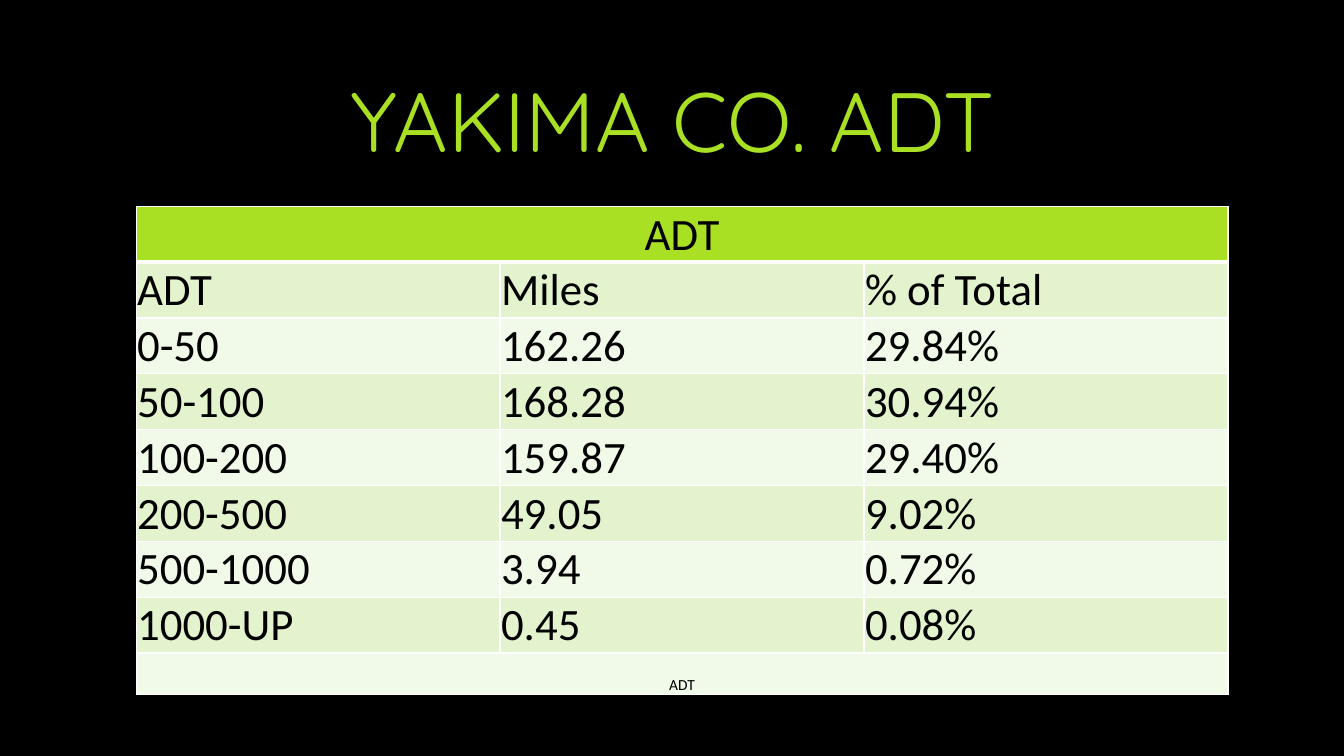
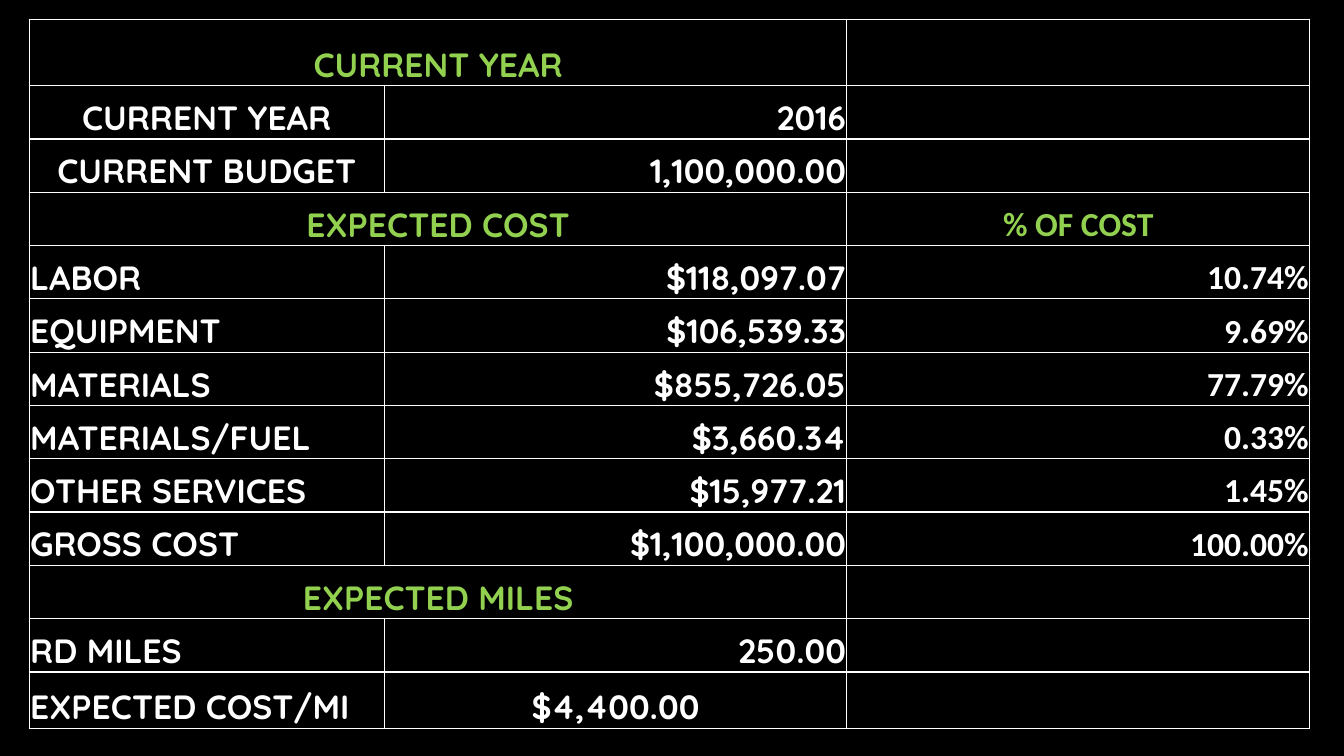
from dataclasses import dataclass
from typing import Optional, Sequence

from lxml.etree import SubElement
from pptx import Presentation
from pptx.dml.color import RGBColor
from pptx.enum.text import MSO_ANCHOR, PP_ALIGN
from pptx.oxml.ns import qn
from pptx.util import Emu, Inches, Pt

UNIT = Inches(0.1)  # grid step: the slide is 133.3 columns by 75 rows
LEFT, CENTER, RIGHT = PP_ALIGN.LEFT, PP_ALIGN.CENTER, PP_ALIGN.RIGHT


@dataclass(frozen=True)
class Theme:
    black: str = "000000"
    white: str = "FFFFFF"
    lime: str = "A9E023"
    green: str = "92D050"
    bands: tuple[str, str] = ("E2F3CD", "F1F9E8")
    head_font: str = "Quicksand"
    body_font: str = "Calibri"
    title_size: float = 60
    adt_size: float = 32
    cost_size: float = 24
    note_size: float = 11
    line: float = 1
    heavy_line: float = 3


T = Theme()


@dataclass(frozen=True)
class Cell:
    text: str = ""
    align: PP_ALIGN = LEFT
    color: str = T.white
    font: str = T.head_font
    size: float = T.cost_size
    bold: bool = False
    fill: Optional[str] = None
    span: int = 1
    top: float = T.line
    bottom: float = T.line


@dataclass(frozen=True)
class Grid:
    """Place and track sizes of a table, in grid units."""
    left: float
    top: float
    cols: Sequence[float]
    rows: Sequence[float]


def units(n: float) -> Emu:
    return Emu(round(n * UNIT))


def write(tf, text: str, *, align: PP_ALIGN, color: str, font: str,
          size: float, bold: bool = False) -> None:
    p = tf.paragraphs[0]
    p.alignment = align
    r = p.add_run()
    r.text = text
    r.font.name, r.font.size, r.font.bold = font, Pt(size), bold
    r.font.color.rgb = RGBColor.from_string(color)


def add_title(s, text: str) -> None:
    sp = s.shapes.add_textbox(units(12.5), units(1.4), units(108.3), units(20.8))
    tf = sp.text_frame
    tf.word_wrap = True
    tf.vertical_anchor = MSO_ANCHOR.MIDDLE
    write(tf, text, align=CENTER, color=T.lime, font=T.head_font, size=T.title_size)


def add_borders(cell, top: float, bottom: float) -> None:
    tc_pr = cell._tc.get_or_add_tcPr()
    widths = {"a:lnL": T.line, "a:lnR": T.line, "a:lnT": top, "a:lnB": bottom}
    for tag, width in widths.items():
        ln = SubElement(tc_pr, qn(tag), w=str(Pt(width)))
        SubElement(SubElement(ln, qn("a:solidFill")), qn("a:srgbClr"), val=T.white)


def format_cell(cell, c: Cell) -> None:
    add_borders(cell, c.top, c.bottom)
    cell.margin_left = cell.margin_right = cell.margin_top = Inches(0.01)
    cell.margin_bottom = 0
    cell.vertical_anchor = MSO_ANCHOR.BOTTOM
    if c.fill:
        cell.fill.solid()
        cell.fill.fore_color.rgb = RGBColor.from_string(c.fill)
    else:
        cell.fill.background()
    if c.text:
        write(cell.text_frame, c.text, align=c.align, color=c.color,
              font=c.font, size=c.size, bold=c.bold)


def add_grid(s, grid: Grid, rows: Sequence[Sequence[Cell]]) -> None:
    frame = s.shapes.add_table(len(grid.rows), len(grid.cols), units(grid.left),
                               units(grid.top), units(sum(grid.cols)),
                               units(sum(grid.rows)))
    table = frame.table
    table.first_row = table.horz_banding = False
    for col, width in zip(table.columns, grid.cols):
        col.width = units(width)
    for row, height in zip(table.rows, grid.rows):
        row.height = units(height)
    for i, row in enumerate(rows):
        j = 0
        for c in row:
            for k in range(c.span):
                format_cell(table.cell(i, j + k), c if k == 0 else
                            Cell(fill=c.fill, top=c.top, bottom=c.bottom))
            if c.span > 1:
                table.cell(i, j).merge(table.cell(i, j + c.span - 1))
            j += c.span


# Traffic table
ADT_ROWS = [
    ("ADT", "Miles", "% of Total"),
    ("0-50", "162.26", "29.84%"),
    ("50-100", "168.28", "30.94%"),
    ("100-200", "159.87", "29.40%"),
    ("200-500", "49.05", "9.02%"),
    ("500-1000", "3.94", "0.72%"),
    ("1000-UP", "0.45", "0.08%"),
]


def adt_cell(text: str, fill: str, align: PP_ALIGN = LEFT,
             size: float = T.adt_size, **extra) -> Cell:
    return Cell(text, align, T.black, T.body_font, size, fill=fill, **extra)


def build_adt(s) -> None:
    add_title(s, "YAKIMA CO. ADT")
    rows = [[adt_cell("ADT", T.lime, CENTER, span=3, bottom=T.heavy_line)]]
    for i, texts in enumerate(ADT_ROWS):
        top = T.line if i else T.heavy_line
        rows.append([adt_cell(t, T.bands[i % 2], top=top) for t in texts])
    rows.append([adt_cell("ADT", T.bands[1], CENTER, T.note_size, span=3)])
    add_grid(s, Grid(13.5, 20.5, [36.1] * 3, [5.5] + [5.54] * 7 + [4.1]), rows)


# Cost table
def section(text: str, side: str = "") -> list[Cell]:
    return [Cell(text, CENTER, T.green, bold=True, span=2),
            Cell(side, CENTER, T.green, T.body_font, bold=True)]


def entry(label: str, value: str, share: str = "", *,
          label_align: PP_ALIGN = LEFT, value_align: PP_ALIGN = RIGHT) -> list[Cell]:
    return [Cell(label, label_align, bold=True),
            Cell(value, value_align, bold=True),
            Cell(share, RIGHT, font=T.body_font, bold=True)]


def build_cost(s) -> None:
    rows = [
        section("CURRENT YEAR"),
        entry("CURRENT YEAR", "2016", label_align=CENTER),
        entry("CURRENT BUDGET", "1,100,000.00", label_align=CENTER),
        section("EXPECTED COST", "% OF COST"),
        entry("LABOR", "$118,097.07", "10.74%"),
        entry("EQUIPMENT", "$106,539.33", "9.69%"),
        entry("MATERIALS", "$855,726.05", "77.79%"),
        entry("MATERIALS/FUEL", "$3,660.34", "0.33%"),
        entry("OTHER SERVICES", "$15,977.21", "1.45%"),
        entry("GROSS COST", "$1,100,000.00", "100.00%"),
        section("EXPECTED MILES"),
        entry("RD MILES", "250.00"),
        entry("EXPECTED COST/MI", "$4,400.00", value_align=CENTER),
    ]
    add_grid(s, Grid(2.9, 1.9, [35.2, 45.9, 45.9], [6.6] + [5.29] * 11 + [5.6]), rows)


def main() -> None:
    prs = Presentation()
    prs.slide_width, prs.slide_height = Inches(13.33), Inches(7.5)
    # Shared black background
    fill = prs.slide_master.background.fill
    fill.solid()
    fill.fore_color.rgb = RGBColor.from_string(T.black)
    for build in (build_adt, build_cost):
        build(prs.slides.add_slide(prs.slide_layouts[6]))
    prs.save("out.pptx")


if __name__ == "__main__":
    main()
